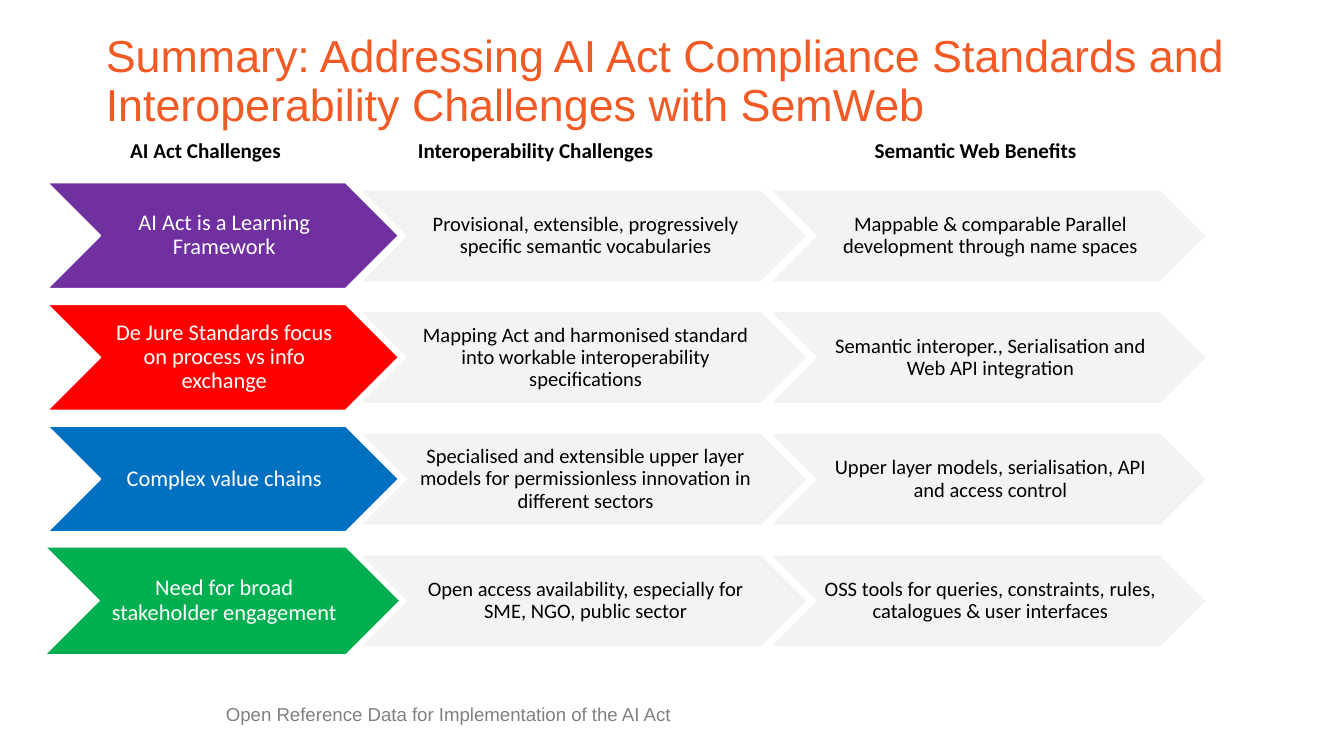
from dataclasses import dataclass
from typing import Optional

from lxml.etree import SubElement
from pptx import Presentation
from pptx.dml.color import RGBColor
from pptx.enum.shapes import MSO_SHAPE
from pptx.enum.text import MSO_ANCHOR, MSO_AUTO_SIZE, PP_ALIGN
from pptx.oxml.ns import qn
from pptx.shapes.autoshape import Shape
from pptx.shapes.group import GroupShape
from pptx.text.text import TextFrame
from pptx.util import Cm, Pt


@dataclass(frozen=True)
class Theme:
    heading_font: str = "Arial"
    body_font: str = "Calibri"
    title: str = "F15A24"
    footer: str = "808080"
    ink: str = "000000"
    paper: str = "FFFFFF"
    panel: str = "F2F2F2"
    panel_opacity: int = 90
    title_size: float = 24
    challenge_size: float = 12
    header_size: float = 11.3
    detail_size: float = 11
    footer_size: float = 10


@dataclass(frozen=True)
class Column:
    header: str
    header_left: float
    header_width: float
    left: float
    top: float
    width: float
    height: float


@dataclass(frozen=True)
class Row:
    color: str
    outline: Optional[str]
    challenge: str
    interoperability: str
    benefit: str


THEME = Theme()
ROW_PITCH = 2.3
HEADER_TOP = 2.46
LABEL_INSETS = (0.05, 0.03, 0, 0.03)
DEFAULT_INSETS = (0.25, 0.13, 0.25, 0.13)

COLUMNS = (
    Column("AI Act Challenges", 2.21, 4.29, 0.89, 3.45, 6.65, 2.01),
    Column("Interoperability Challenges", 7.65, 6.35, 6.88, 3.62, 8.33, 1.68),
    Column("Semantic Web Benefits", 16.28, 5.56, 14.63, 3.62, 8.13, 1.68),
)

ROWS = (
    Row("7030A0", THEME.paper, "AI Act is a Learning Framework",
        "Provisional, extensible, progressively specific semantic vocabularies",
        "Mappable & comparable Parallel development through name spaces"),
    Row("FF0000", THEME.paper, "De Jure Standards focus on process vs info exchange",
        "Mapping Act and harmonised standard into workable interoperability specifications",
        "Semantic interoper., Serialisation and Web API integration"),
    Row("0070C0", THEME.paper, "Complex value chains",
        "Specialised and extensible upper layer models for permissionless innovation in different sectors",
        "Upper layer models, serialisation, API and access control"),
    Row("00B050", None, "Need for broad stakeholder engagement",
        "Open access availability, especially for SME, NGO, public sector",
        "OSS tools for queries, constraints, rules, catalogues & user interfaces"),
)


def write(frame: TextFrame, text: str, *, size: float, color: str,
          font: str = THEME.body_font, bold: bool = False,
          align: PP_ALIGN = PP_ALIGN.LEFT, anchor: MSO_ANCHOR = MSO_ANCHOR.TOP,
          spacing: float = 1.0, insets: tuple = DEFAULT_INSETS,
          auto_size: MSO_AUTO_SIZE = MSO_AUTO_SIZE.NONE) -> None:
    frame.word_wrap = True
    frame.auto_size = auto_size
    frame.vertical_anchor = anchor
    (frame.margin_left, frame.margin_top,
     frame.margin_right, frame.margin_bottom) = map(Cm, insets)
    paragraph = frame.paragraphs[0]
    paragraph.alignment = align
    paragraph.line_spacing = spacing
    run = paragraph.add_run()
    run.text = text
    run.font.name = font
    run.font.size = Pt(size)
    run.font.bold = bold
    run.font.color.rgb = RGBColor.from_string(color)


def set_opacity(shape: Shape, percent: int) -> None:
    for color in shape._element.spPr.iter(qn("a:srgbClr")):
        SubElement(color, qn("a:alpha")).set("val", str(percent * 1000))


def add_step(diagram: GroupShape, column: Column, row_index: int, text: str, *,
             fill: str, outline: Optional[str], opacity: int,
             size: float, color: str) -> None:
    top = column.top + row_index * ROW_PITCH
    chevron = diagram.shapes.add_shape(
        MSO_SHAPE.CHEVRON, Cm(column.left), Cm(top), Cm(column.width), Cm(column.height))
    chevron.shadow.inherit = False
    chevron.fill.solid()
    chevron.fill.fore_color.rgb = RGBColor.from_string(fill)
    if outline:
        chevron.line.color.rgb = RGBColor.from_string(outline)
        chevron.line.width = Pt(1)
    else:
        chevron.line.fill.background()
    if opacity < 100:
        set_opacity(chevron, opacity)
    label = diagram.shapes.add_textbox(
        Cm(column.left + column.height / 2), Cm(top),
        Cm(column.width - column.height), Cm(column.height))
    write(label.text_frame, text, size=size, color=color, align=PP_ALIGN.CENTER,
          anchor=MSO_ANCHOR.MIDDLE, spacing=0.9, insets=LABEL_INSETS)


def add_row(diagram: GroupShape, index: int, row: Row) -> None:
    challenge_column, *detail_columns = COLUMNS
    add_step(diagram, challenge_column, index, row.challenge, fill=row.color,
             outline=row.outline, opacity=100,
             size=THEME.challenge_size, color=THEME.paper)
    for column, detail in zip(detail_columns, (row.interoperability, row.benefit)):
        add_step(diagram, column, index, detail, fill=THEME.panel,
                 outline=THEME.panel, opacity=THEME.panel_opacity,
                 size=THEME.detail_size, color=THEME.ink)


def main() -> None:
    presentation = Presentation()
    presentation.slide_width, presentation.slide_height = Cm(25.4), Cm(14.29)
    slide = presentation.slides.add_slide(presentation.slide_layouts[5])

    title = slide.shapes.title
    title.left, title.top, title.width, title.height = map(Cm, (1.75, 0.76, 21.9, 1.6))
    write(title.text_frame,
          "Summary: Addressing AI Act Compliance Standards and "
          "Interoperability Challenges with SemWeb",
          size=THEME.title_size, color=THEME.title, font=THEME.heading_font,
          anchor=MSO_ANCHOR.MIDDLE, spacing=0.9)

    footer = slide.shapes.add_textbox(Cm(4.27), Cm(13.08), Cm(10.13), Cm(0.64))
    write(footer.text_frame, "Open Reference Data for Implementation of the AI Act",
          size=THEME.footer_size, color=THEME.footer, font=THEME.heading_font,
          anchor=MSO_ANCHOR.BOTTOM, spacing=0.9, insets=(0, 0, 0, 0))

    diagram = slide.shapes.add_group_shape()
    for index, row in enumerate(ROWS):
        add_row(diagram, index, row)

    for column in COLUMNS:
        header = slide.shapes.add_textbox(
            Cm(column.header_left), Cm(HEADER_TOP), Cm(column.header_width), Cm(0.74))
        write(header.text_frame, column.header, size=THEME.header_size,
              color=THEME.ink, bold=True, auto_size=MSO_AUTO_SIZE.SHAPE_TO_FIT_TEXT)

    presentation.save("out.pptx")


if __name__ == "__main__":
    main()
